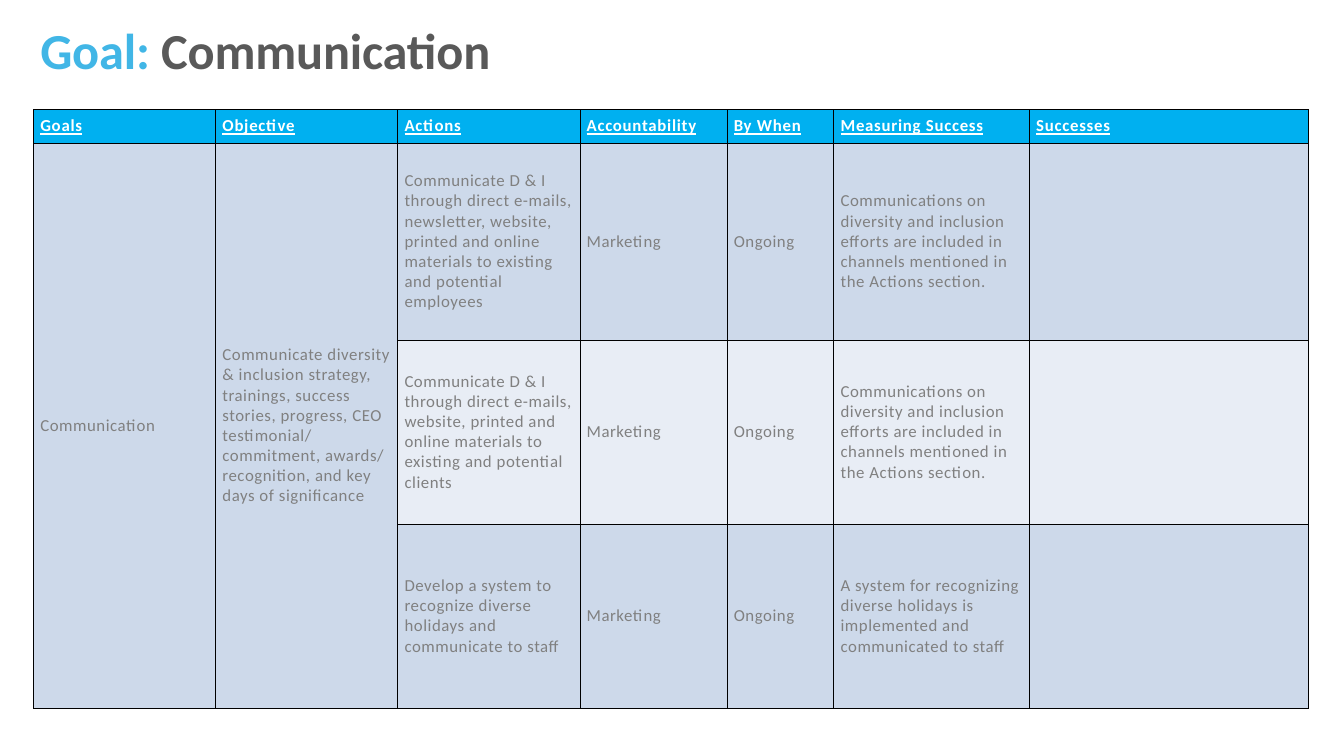
from lxml.etree import SubElement
from pptx import Presentation
from pptx.dml.color import RGBColor
from pptx.enum.text import MSO_ANCHOR, MSO_AUTO_SIZE, PP_ALIGN
from pptx.oxml.ns import qn
from pptx.util import Emu, Pt

EMU_PER_PX = 9144  # 100 px to the inch

HEADER_FILL = "00B0F0"
BAND_FILLS = ("CDD9EA", "E8EDF5")
TITLE_FORMAT = {"name": "Calibri", "size": Pt(54), "bold": True}
HEADER_FORMAT = {"name": "Calibri", "size": Pt(18), "bold": True, "underline": True}
BODY_FORMAT = {"name": "Calibri", "size": Pt(18), "bold": False}

COLUMN_WIDTHS = (271, 271, 271, 219, 159, 291, 415)
ROW_HEIGHTS = (35, 293, 274, 274)
MERGED_COLUMNS = (0, 1)

CHANNELS_MEASURE = ("Communications on diversity and inclusion efforts are included in "
                    "channels mentioned in the Actions section.")
ROWS = (
    ("Goals", "Objective", "Actions", "Accountability", "By When",
     "Measuring Success", "Successes"),
    ("Communication",
     "Communicate diversity & inclusion strategy, trainings, success stories, progress, "
     "CEO testimonial/ commitment, awards/ recognition, and key days of significance",
     "Communicate D & I through direct e-mails, newsletter, website, printed and online "
     "materials to existing and potential employees",
     "Marketing", "Ongoing", CHANNELS_MEASURE, ""),
    ("", "",
     "Communicate D & I through direct e-mails, website, printed and online materials "
     "to existing and potential clients",
     "Marketing", "Ongoing", CHANNELS_MEASURE, ""),
    ("", "", "Develop a system to recognize diverse holidays and communicate to staff",
     "Marketing", "Ongoing",
     "A system for recognizing diverse holidays is implemented and communicated to staff", ""),
)


def px(value):
    return Emu(value * EMU_PER_PX)


def color(hex_string):
    return RGBColor.from_string(hex_string)


def set_attributes(target, values):
    for name, value in values.items():
        setattr(target, name, value)


def add_run(paragraph, text, font_format, hex_color, tracking):
    """Add a run; tracking is in hundredths of a point."""
    run = paragraph.add_run()
    run.text = text
    set_attributes(run.font, font_format)
    run.font.color.rgb = color(hex_color)
    run.font._element.set("spc", str(tracking))


def add_borders(cell):
    properties = cell._tc.get_or_add_tcPr()
    for side in ("a:lnL", "a:lnR", "a:lnT", "a:lnB"):
        line = SubElement(properties, qn(side), w=str(Pt(1)))
        fill = SubElement(line, qn("a:solidFill"))
        SubElement(fill, qn("a:srgbClr"), val="000000")


def format_title(title, left, top, width, height):
    set_attributes(title, {"left": px(left), "top": px(top),
                           "width": px(width), "height": px(height)})
    frame = title.text_frame
    set_attributes(frame, {"margin_left": 0, "margin_right": 0, "margin_top": 0,
                           "margin_bottom": 0, "word_wrap": True,
                           "vertical_anchor": MSO_ANCHOR.TOP,
                           "auto_size": MSO_AUTO_SIZE.SHAPE_TO_FIT_TEXT})
    paragraph = frame.paragraphs[0]
    set_attributes(paragraph, {"alignment": PP_ALIGN.LEFT, "line_spacing": Pt(64.8)})
    add_run(paragraph, "Goal: ", TITLE_FORMAT, "41B6E6", -20)
    add_run(paragraph, "Communication", TITLE_FORMAT, "595959", -20)


def fill_cell(cell, text, row_index):
    is_header = row_index == 0
    margin = px(10)
    set_attributes(cell, {"margin_left": margin, "margin_right": margin,
                          "margin_top": margin, "margin_bottom": margin,
                          "vertical_anchor": MSO_ANCHOR.MIDDLE})
    # Borders come before the fill in the cell properties
    add_borders(cell)
    cell.fill.solid()
    cell.fill.fore_color.rgb = color(
        HEADER_FILL if is_header else BAND_FILLS[(row_index - 1) % 2])
    if text:
        paragraph = cell.text_frame.paragraphs[0]
        paragraph.line_spacing = Pt(21.6)
        if is_header:
            add_run(paragraph, text, HEADER_FORMAT, "FFFFFF", 80)
        else:
            add_run(paragraph, text, BODY_FORMAT, "808080", 60)


def add_goal_table(slide, left, top):
    table = slide.shapes.add_table(
        len(ROWS), len(COLUMN_WIDTHS), px(left), px(top),
        px(sum(COLUMN_WIDTHS)), px(sum(ROW_HEIGHTS))).table
    table.horz_banding = False
    for column, width in zip(table.columns, COLUMN_WIDTHS):
        column.width = px(width)
    for row, height in zip(table.rows, ROW_HEIGHTS):
        row.height = px(height)
    for row_index, texts in enumerate(ROWS):
        for column_index, text in enumerate(texts):
            fill_cell(table.cell(row_index, column_index), text, row_index)
    # Goal and objective span all the action rows
    for column_index in MERGED_COLUMNS:
        table.cell(1, column_index).merge(table.cell(len(ROWS) - 1, column_index))


def main():
    presentation = Presentation()
    set_attributes(presentation, {"slide_width": px(2000), "slide_height": px(1125)})
    slide = presentation.slides.add_slide(presentation.slide_layouts[5])
    format_title(slide.shapes.title, 60, 28, 1689, 110)
    add_goal_table(slide, 50, 163)
    presentation.save("out.pptx")


if __name__ == "__main__":
    main()
